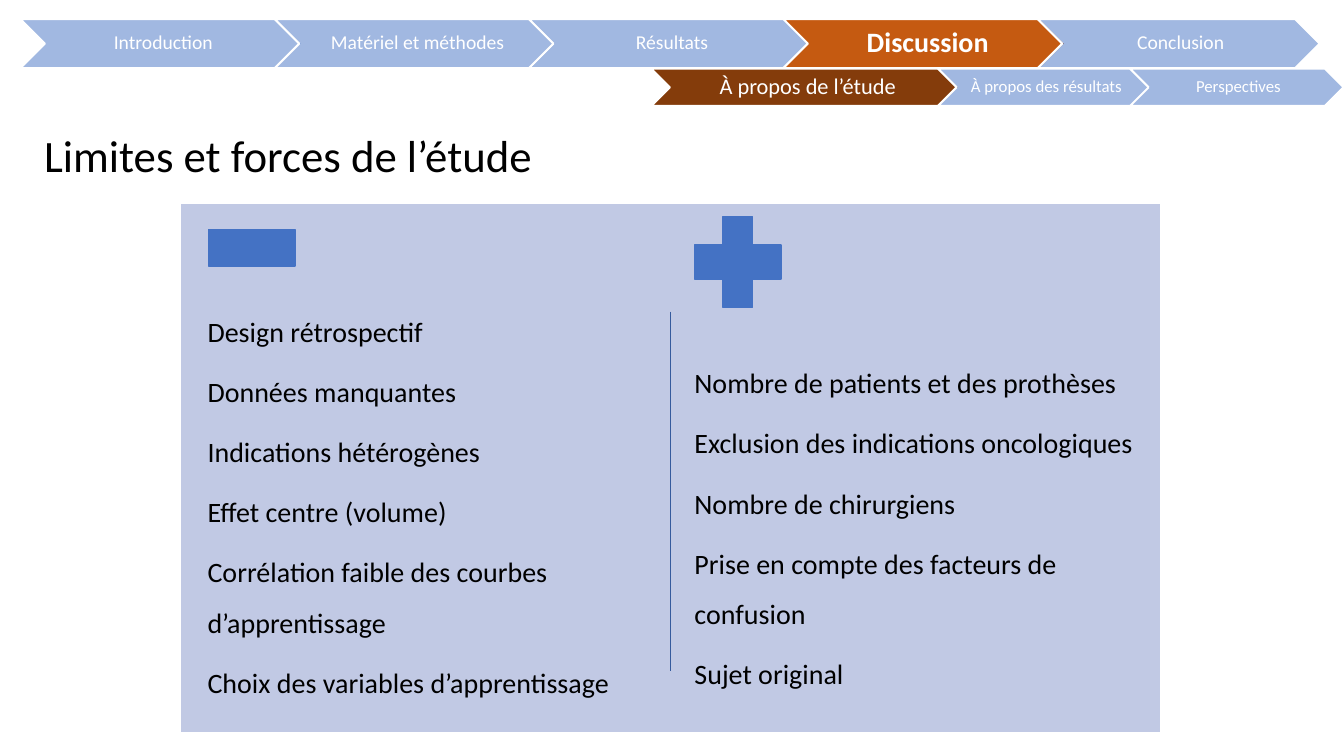
from lxml.etree import SubElement
from pptx import Presentation
from pptx.dml.color import RGBColor
from pptx.enum.shapes import MSO_CONNECTOR, MSO_SHAPE
from pptx.enum.text import MSO_ANCHOR, MSO_AUTO_SIZE, PP_ALIGN
from pptx.oxml.ns import qn
from pptx.util import Cm, Pt

COLORS = {
    "white": "FFFFFF",
    "black": "000000",
    "blue": "4472C4",
    "orange": "C55A11",
    "brown": "843C0B",
    "panel": "C1C9E4",
    "divider": "365B9D",
}


class Builder:
    font = "Calibri"

    def __init__(self, page):
        self.page = page

    def color(self, name):
        return RGBColor.from_string(COLORS[name])

    def shape(self, kind, place, fill, line, line_width=1, alpha=None):
        shape = self.page.shapes.add_shape(kind, *map(Cm, place))
        shape.shadow.inherit = False
        shape.fill.solid()
        shape.fill.fore_color.rgb = self.color(fill)
        shape.line.color.rgb = self.color(line)
        shape.line.width = Pt(line_width)
        if alpha:
            color = shape.element.spPr.find(qn("a:solidFill"))[0]
            SubElement(color, qn("a:alpha")).set("val", str(alpha * 1000))
        return shape

    def text(self, box, lines, size, color, margins, align=PP_ALIGN.LEFT,
             anchor=MSO_ANCHOR.TOP, spacing=1.0, after=0, bold=False):
        frame = box.text_frame
        frame.word_wrap = True
        frame.auto_size = MSO_AUTO_SIZE.NONE
        frame.vertical_anchor = anchor
        (frame.margin_left, frame.margin_top,
         frame.margin_right, frame.margin_bottom) = map(Cm, margins)
        for index, line in enumerate(lines):
            para = frame.add_paragraph() if index else frame.paragraphs[0]
            para.alignment = align
            para.line_spacing = spacing
            para.space_before = Pt(0)
            para.space_after = Pt(after)
            span = para.add_run()
            span.text = line
            span.font.name = self.font
            span.font.size = Pt(size)
            span.font.bold = bold
            span.font.color.rgb = self.color(color)

    def chevrons(self, left, top, height, overlap, steps):
        for label, width, size, fill, alpha, bold in steps:
            step = self.shape(MSO_SHAPE.CHEVRON, (left, top, width, height),
                              fill, "white", 1.5, alpha)
            self.text(step, [label], size, "white",
                      (0.011 * size, 0.05, 0.05, 0.05), PP_ALIGN.CENTER,
                      MSO_ANCHOR.MIDDLE, 0.9, bold=bold)
            left += width - overlap

    def place(self, box, place):
        box.left, box.top, box.width, box.height = map(Cm, place)

    def title(self, place, line):
        box = self.page.shapes.title
        self.place(box, place)
        self.text(box, [line], 32, "black", (0.25, 0.13, 0.25, 0.13))

    def bullet_free_list(self, number, place, lines):
        box = self.page.placeholders[number]
        self.place(box, place)
        self.text(box, lines, 20, "black", (0.1,) * 4, spacing=1.5, after=7)
        for para in box.text_frame.paragraphs:
            properties = para._p.get_or_add_pPr()
            properties.set("marL", "0")
            properties.set("indent", "0")
            SubElement(properties, qn("a:buNone"))

    def line(self, start, end, color):
        line = self.page.shapes.add_connector(
            MSO_CONNECTOR.STRAIGHT, *map(Cm, start + end))
        line.line.color.rgb = self.color(color)
        line.line.width = Pt(1)
        SubElement(line.element.spPr, qn("a:effectLst"))


def main():
    deck = Presentation()
    deck.slide_width, deck.slide_height = Cm(33.87), Cm(19.05)
    page = deck.slides.add_slide(deck.slide_layouts[3])
    builder = Builder(page)

    # Panel, kept behind the placeholders
    panel = builder.shape(MSO_SHAPE.RECTANGLE, (4.55, 5.13, 24.71, 13.34),
                          "panel", "white")
    page.shapes.title.element.addprevious(panel.element)

    # Section and subsection navigation
    builder.chevrons(0.51, 0.48, 1.24, 0.7, [
        ("Introduction", 7.11, 14, "blue", 50, False),
        ("Matériel et méthodes", 7.11, 14, "blue", 50, False),
        ("Résultats", 7.11, 14, "blue", 50, False),
        ("Discussion", 7.11, 20, "orange", None, True),
        ("Conclusion", 7.11, 14, "blue", 50, False),
    ])
    builder.chevrons(16.41, 1.73, 0.94, 0.54, [
        ("À propos de l’étude", 7.77, 16, "brown", None, False),
        ("À propos des résultats", 5.38, 12, "blue", 50, False),
        ("Perspectives", 5.38, 12, "blue", 50, False),
    ])

    # Title
    builder.title((0.86, 3.1, 28.37, 1.63), "Limites et forces de l’étude")

    # Limits and strengths
    builder.bullet_free_list(1, (5.13, 7.39, 11.28, 9.5), [
        "Design rétrospectif",
        "Données manquantes",
        "Indications hétérogènes",
        "Effet centre (volume)",
        "Corrélation faible des courbes d’apprentissage",
        "Choix des variables d’apprentissage",
    ])
    builder.bullet_free_list(2, (17.4, 8.69, 11.53, 6.81), [
        "Nombre de patients et des prothèses",
        "Exclusion des indications oncologiques",
        "Nombre de chirurgiens",
        "Prise en compte des facteurs de confusion",
        "Sujet original",
    ])

    # Plus and minus signs, divider
    plus = builder.shape(MSO_SHAPE.CROSS, (17.5, 5.46, 2.18, 2.29),
                         "blue", "blue")
    plus.adjustments[0] = 0.33
    builder.shape(MSO_SHAPE.RECTANGLE, (5.26, 5.79, 2.18, 0.91),
                  "blue", "blue")
    builder.line((16.89, 7.85), (16.89, 16.92), "divider")

    deck.save("out.pptx")


if __name__ == "__main__":
    main()
